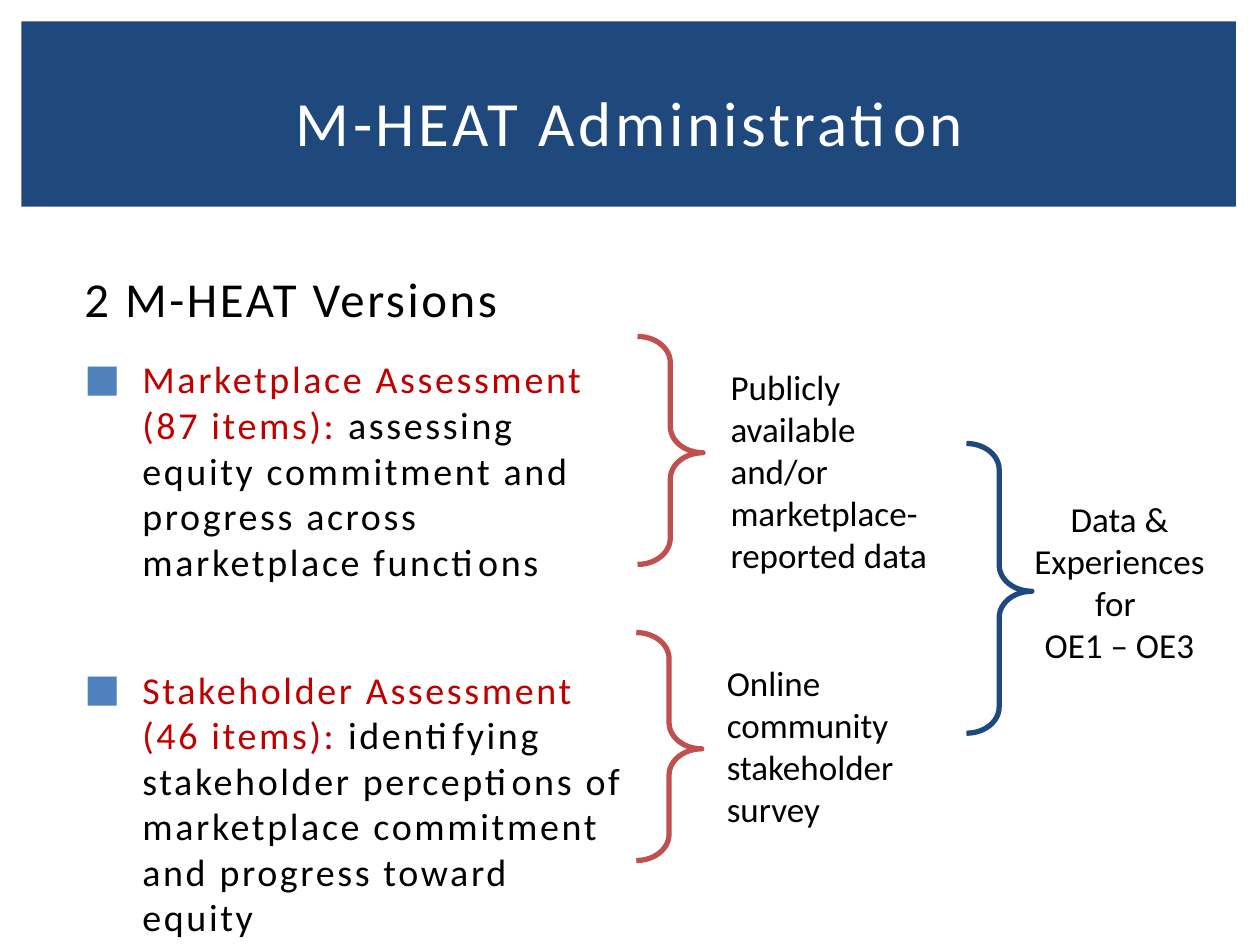
import pptx
import pptx.util
import pptx.dml.color
import pptx.enum.shapes
import pptx.enum.text
import pptx.oxml.ns
import lxml.etree

NAVY = pptx.dml.color.RGBColor(0x1F, 0x49, 0x7D)
BLUE = pptx.dml.color.RGBColor(0x4F, 0x81, 0xBD)
BRICK = pptx.dml.color.RGBColor(0xC0, 0x50, 0x4D)
RED = pptx.dml.color.RGBColor(0xC0, 0x00, 0x00)
BLACK = pptx.dml.color.RGBColor(0, 0, 0)
WHITE = pptx.dml.color.RGBColor(0xFF, 0xFF, 0xFF)

WIDTH, HEIGHT = 10, 7.5
TITLE = "M-HEAT Administration"
HEADING = "2 M-HEAT Versions"
VERSIONS = [
    ("Marketplace Assessment (87 items): ",
     "assessing equity commitment and progress across marketplace functions", 16.5),
    ("Stakeholder Assessment (46 items): ",
     "identifying stakeholder perceptions of marketplace commitment and progress toward equity", 47),
]
BRACES = [
    ((5.06, 2.67, 0.52, 1.81), BRICK),
    ((5.05, 5.02, 0.52, 1.81), BRICK),
    ((7.67, 3.52, 0.52, 2.3), NAVY),
]
SOURCES = [
    ((5.7, 2.85, 1.97, 1.45), "Publicly available and/or marketplace-reported data", "LEFT"),
    ((5.67, 5.2, 2, 1.47), "Online community stakeholder survey", "LEFT"),
    ((7.97, 3.9, 1.83, 1.45), "Data & Experiences for \nOE1 – OE3", "CENTER"),
]


def inches(box):
    """Convert a box in inches to lengths."""
    return [pptx.util.Inches(value) for value in box]


def place(shape, box):
    """Move a shape to a box in inches."""
    shape.left, shape.top, shape.width, shape.height = inches(box)


def write(paragraph, text, size=20, color=BLACK, spacing=0, align="LEFT"):
    """Add formatted text to a paragraph, one run per line."""
    paragraph.alignment = getattr(pptx.enum.text.PP_ALIGN, align)
    for number, line in enumerate(text.split("\n")):
        if number:
            paragraph.add_line_break()
        run = paragraph.add_run()
        run.text = line
        run.font.name = "Calibri"
        run.font.size = pptx.util.Pt(size)
        run.font.color.rgb = color
        run._r.get_or_add_rPr().set("spc", str(round(spacing * 100)))


def set_bullet(paragraph, margin, indent=0, symbol=None):
    """Set the indents and the bullet of a paragraph."""
    properties = paragraph._p.get_or_add_pPr()
    properties.set("marL", str(pptx.util.Inches(margin)))
    properties.set("indent", str(pptx.util.Inches(indent)))
    qualified = pptx.oxml.ns.qn
    if symbol is None:
        lxml.etree.SubElement(properties, qualified("a:buNone"))
        return
    color = lxml.etree.SubElement(properties, qualified("a:buClr"))
    lxml.etree.SubElement(color, qualified("a:srgbClr"), val=str(BLUE))
    lxml.etree.SubElement(properties, qualified("a:buFont"), typeface="Calibri")
    lxml.etree.SubElement(properties, qualified("a:buChar"), char=symbol)


def add_band(slide):
    """Add the title band behind everything else."""
    band = slide.shapes.add_shape(
        pptx.enum.shapes.MSO_SHAPE.RECTANGLE, *inches((0.17, 0.17, 9.64, 1.47)))
    band.shadow.inherit = False
    band.fill.solid()
    band.fill.fore_color.rgb = NAVY
    band.line.fill.background()
    band.element.getparent().insert(2, band.element)


def add_title(slide):
    """Fill the title placeholder."""
    title = slide.shapes.title
    place(title, (0, 0.39, WIDTH, 1.15))
    title.text_frame.vertical_anchor = pptx.enum.text.MSO_ANCHOR.MIDDLE
    write(title.text_frame.paragraphs[0], TITLE, size=36, color=WHITE, spacing=2, align="CENTER")


def add_versions(slide):
    """Fill the body placeholder with the heading and the two versions."""
    body = slide.placeholders[1]
    place(body, (0.52, 2.08, 4.55, 4.82))
    frame = body.text_frame
    frame.auto_size = pptx.enum.text.MSO_AUTO_SIZE.NONE
    heading = frame.paragraphs[0]
    heading.space_before = pptx.util.Pt(0)
    set_bullet(heading, 0.05)
    write(heading, HEADING, size=27.9, spacing=1.5)
    for name, purpose, gap in VERSIONS:
        paragraph = frame.add_paragraph()
        paragraph.space_before = pptx.util.Pt(gap)
        set_bullet(paragraph, 0.51, -0.46, "■")
        write(paragraph, name, size=21.7, color=RED, spacing=1.5)
        write(paragraph, purpose, size=21.7, spacing=1.5)


def add_brace(slide, box, color):
    """Add a right brace."""
    brace = slide.shapes.add_shape(pptx.enum.shapes.MSO_SHAPE.RIGHT_BRACE, *inches(box))
    brace.adjustments[0], brace.adjustments[1] = 0.4, 0.51
    brace.shadow.inherit = False
    brace.fill.background()
    brace.line.color.rgb = color
    brace.line.width = pptx.util.Pt(3)


def add_source(slide, box, text, align):
    """Add a label beside a brace."""
    frame = slide.shapes.add_textbox(*inches(box)).text_frame
    frame.word_wrap = True
    frame.auto_size = pptx.enum.text.MSO_AUTO_SIZE.SHAPE_TO_FIT_TEXT
    write(frame.paragraphs[0], text, align=align)


def main():
    """Build the slide and save it."""
    presentation = pptx.Presentation()
    presentation.slide_width, presentation.slide_height = inches((WIDTH, HEIGHT))
    slide = presentation.slides.add_slide(presentation.slide_layouts[1])
    add_band(slide)
    add_title(slide)
    add_versions(slide)
    for box, color in BRACES:
        add_brace(slide, box, color)
    for box, text, align in SOURCES:
        add_source(slide, box, text, align)
    presentation.save("out.pptx")


if __name__ == "__main__":
    main()
